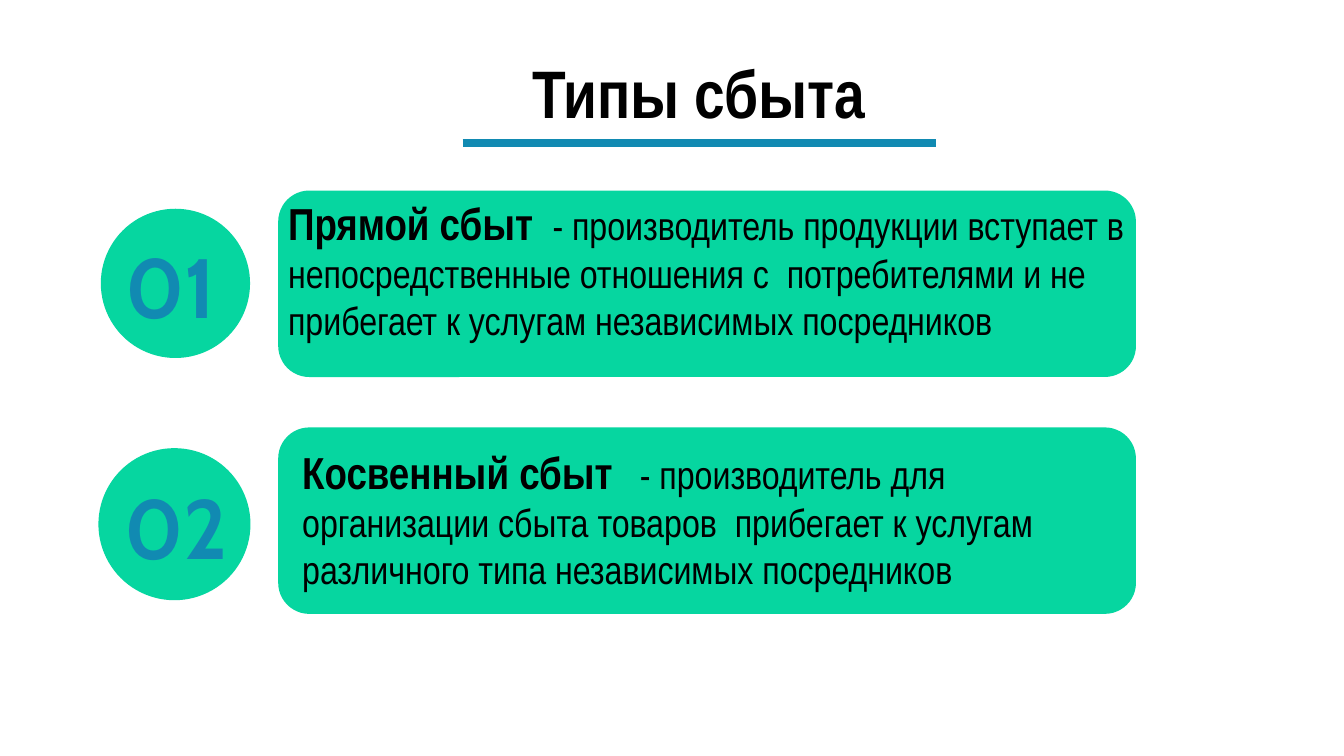
from pptx import Presentation
from pptx.dml.color import RGBColor
from pptx.enum.shapes import MSO_CONNECTOR, MSO_SHAPE
from pptx.enum.text import MSO_ANCHOR, MSO_AUTO_SIZE, PP_ALIGN
from pptx.oxml.ns import qn
from pptx.util import Pt

GREEN, BLUE, BLACK = "06D6A0", "118AB2", "000000"
BODY_FONT, NUMBER_FONT = "Arial Narrow", "Cabin"
TYPES = [
    ("01", "Прямой сбыт ",
     " - производитель продукции вступает в непосредственные отношения с  "
     "потребителями и не прибегает к услугам независимых посредников",
     (72, 13), 0, (0, 0, 612.7)),
    ("02", "Косвенный сбыт",
     "   - производитель для организации сбыта товаров  прибегает к услугам "
     "различного типа независимых посредников",
     (71.3, 15.8), 2, (10.1, 8.6, 567.4)),
]


def color(value):
    """Return the colour for a hex string."""
    return RGBColor.from_string(value)


def style(r, name, size, fill, bold):
    """Format one run."""
    r.font.name, r.font.size, r.font.bold = name, Pt(size), bold
    r.font.color.rgb = color(fill)


def add_panel(s, kind, x, y, w, h, border=0):
    """Add a flat green shape with an optional outline."""
    sp = s.shapes.add_shape(kind, Pt(x), Pt(y), Pt(w), Pt(h))
    sp.shadow.inherit = False
    sp.fill.solid()
    sp.fill.fore_color.rgb = color(GREEN)
    if border:
        sp.line.color.rgb = color(GREEN)
        sp.line.width = Pt(border)
    else:
        sp.line.fill.background()


def add_text(s, x, y, w, h, parts):
    """Add a wrapped paragraph of (text, font, size, colour, bold) parts."""
    tf = s.shapes.add_textbox(Pt(x), Pt(y), Pt(w), Pt(h)).text_frame
    tf.word_wrap = True
    p = tf.paragraphs[0]
    for text, *look in parts:
        r = p.add_run()
        r.text = text
        style(r, *look)


def add_title(s, text, x, y, w, h):
    """Place the title and the rule beneath it."""
    sp = s.shapes.title
    sp.left, sp.top, sp.width, sp.height = Pt(x), Pt(y), Pt(w), Pt(h)
    tf = sp.text_frame
    tf.text = text
    tf.auto_size = MSO_AUTO_SIZE.NONE
    tf.vertical_anchor = MSO_ANCHOR.TOP
    p = tf.paragraphs[0]
    p.alignment = PP_ALIGN.CENTER
    style(p.runs[0], BODY_FONT, 48, BLACK, True)
    rule_y = Pt(y + h + 3.6)
    rule = s.shapes.add_connector(
        MSO_CONNECTOR.STRAIGHT, Pt(x - 21.6), rule_y, Pt(x + w + 22.3), rule_y)
    rule.line.color.rgb = color(BLUE)
    rule.line.width = Pt(6)
    sp_pr = rule._element.spPr
    sp_pr.append(sp_pr.makeelement(qn("a:effectLst"), {}))


def add_type(s, x, y, w, h, item):
    """Draw a numbered circle and its description panel."""
    number, term, meaning, (circle_x, circle_dy), border, (dx, dy, text_w) = item
    circle_y = y + circle_dy
    add_panel(s, MSO_SHAPE.ROUNDED_RECTANGLE, x, y, w, h)
    add_panel(s, MSO_SHAPE.FLOWCHART_CONNECTOR, circle_x, circle_y, 106.6, 106.6, border)
    add_text(s, circle_x + 10.5, circle_y + 15, 106.6, 79.9,
             [(number, NUMBER_FONT, 60, BLUE, True)])
    add_text(s, x + dx, y + dy, text_w, 113.8,
             [(term, BODY_FONT, 32, BLACK, True),
              (meaning, BODY_FONT, 28, BLACK, False)])


def main():
    """Build and save the slide."""
    prs = Presentation()
    prs.slide_width, prs.slide_height = Pt(960), Pt(540)
    s = prs.slides.add_slide(prs.slide_layouts[5])
    add_title(s, "Типы сбыта", 352.1, 33.1, 294.5, 65.5)
    for i, item in enumerate(TYPES):
        add_type(s, 198.7, 136.1 + i * 169.2, 612.7, 133.2, item)
    prs.save("out.pptx")


if __name__ == "__main__":
    main()
